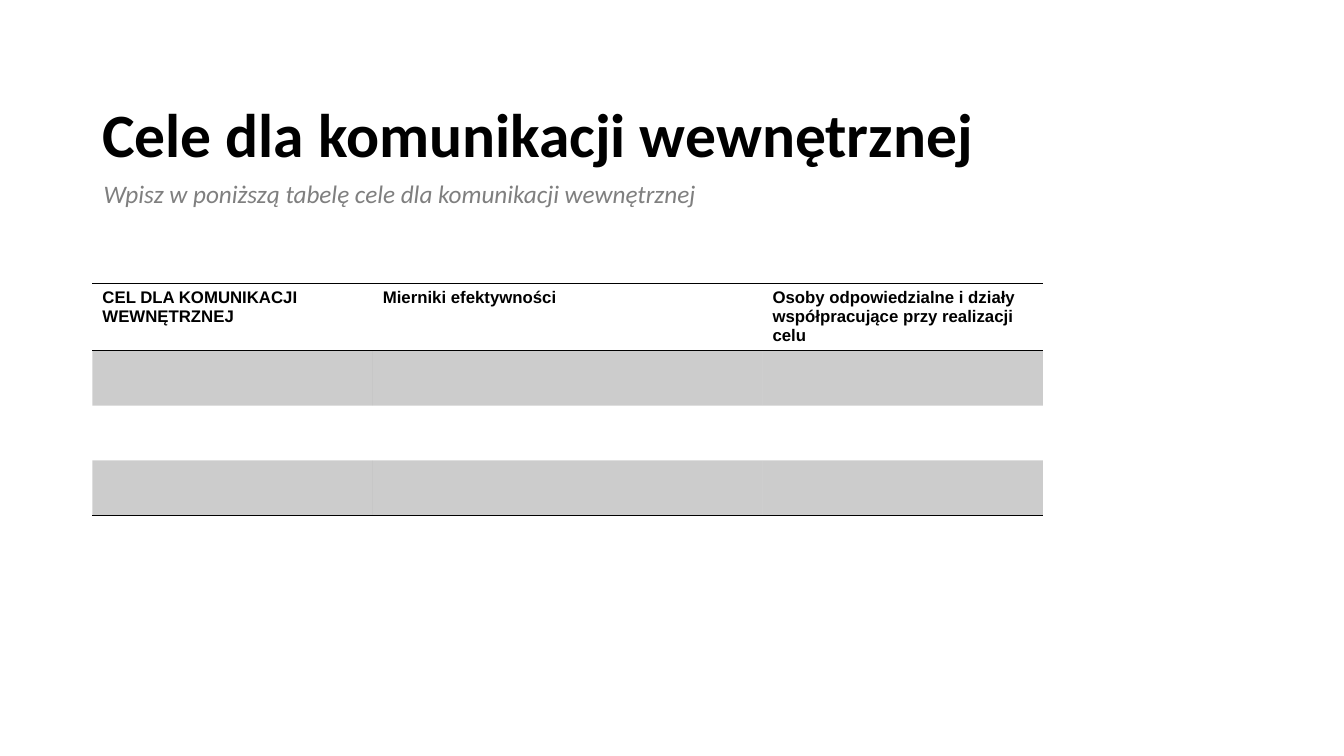
from dataclasses import dataclass

from lxml.etree import SubElement
from pptx import Presentation
from pptx.dml.color import RGBColor
from pptx.enum.text import MSO_ANCHOR
from pptx.oxml.ns import qn
from pptx.util import Pt


@dataclass(frozen=True)
class Theme:
    ink: str = "000000"
    muted: str = "7F7F7F"
    heading_font: str = "Calibri"
    table_font: str = "Arial"
    title_size: float = 44
    subtitle_size: float = 18
    header_size: float = 12
    rule_width: float = 1
    band_opacity: int = 20


@dataclass(frozen=True)
class Box:
    left: float
    top: float
    width: float
    height: float

    def lengths(self):
        return Pt(self.left), Pt(self.top), Pt(self.width), Pt(self.height)


THEME = Theme()
NO_STYLE = "{2D5ABB26-0587-4C30-8999-92F81FD0307C}"
HEADERS = (
    "CEL DLA KOMUNIKACJI WEWNĘTRZNEJ",
    "Mierniki efektywności",
    "Osoby odpowiedzialne i działy współpracujące przy realizacji celu",
)
COLUMN_SHARES = (0.295, 0.41, 0.295)
HEADER_HEIGHT = 48
BODY_ROWS = 3


def add_span(para, text, font, size, color, bold=False, italic=False):
    span = para.add_run()
    span.text = text
    span.font.name = font
    span.font.size = Pt(size)
    span.font.bold = bold
    span.font.italic = italic
    span.font.color.rgb = RGBColor.from_string(color)


def add_text_box(page, box, anchor):
    frame = page.shapes.add_textbox(*box.lengths()).text_frame
    frame.word_wrap = True
    frame.vertical_anchor = anchor
    return frame.paragraphs[0]


def add_title(page, box):
    para = add_text_box(page, box, MSO_ANCHOR.MIDDLE)
    para.line_spacing = 0.9
    add_span(para, "Cele dla komunikacji wewnętrznej",
             THEME.heading_font, THEME.title_size, THEME.ink, bold=True)


def add_subtitle(page, box):
    para = add_text_box(page, box, MSO_ANCHOR.TOP)
    add_span(para, "Wpisz w poniższą tabelę cele dla komunikacji wewnętrznej",
             THEME.heading_font, THEME.subtitle_size, THEME.muted, italic=True)


def add_rule(cell, side):
    properties = cell._tc.get_or_add_tcPr()
    line = SubElement(properties, qn(f"a:ln{side}"), w=str(Pt(THEME.rule_width)))
    fill = SubElement(line, qn("a:solidFill"))
    SubElement(fill, qn("a:srgbClr"), val=THEME.ink)


def fill_band(cell):
    cell.fill.solid()
    cell.fill.fore_color.rgb = RGBColor.from_string(THEME.ink)
    color = cell._tc.tcPr.find(qn("a:solidFill")).find(qn("a:srgbClr"))
    SubElement(color, qn("a:alpha"), val=str(THEME.band_opacity * 1000))


def add_goals_table(page, box):
    frame = page.shapes.add_table(BODY_ROWS + 1, len(HEADERS), *box.lengths())
    table = frame.table
    table._tbl.tblPr.find(qn("a:tableStyleId")).text = NO_STYLE
    for column, share in zip(table.columns, COLUMN_SHARES):
        column.width = Pt(box.width * share)
    body_height = (box.height - HEADER_HEIGHT) / BODY_ROWS
    for index, row in enumerate(table.rows):
        row.height = Pt(body_height if index else HEADER_HEIGHT)
        for cell, header in zip(row.cells, HEADERS):
            if index == 0:
                add_span(cell.text_frame.paragraphs[0], header,
                         THEME.table_font, THEME.header_size, THEME.ink, bold=True)
                add_rule(cell, "T")
            if index in (0, BODY_ROWS):
                add_rule(cell, "B")
            if index % 2:
                fill_band(cell)
            else:
                cell.fill.background()


def main():
    deck = Presentation()
    deck.slide_width, deck.slide_height = Pt(960), Pt(540)
    page = deck.slides.add_slide(deck.slide_layouts[6])
    add_goals_table(page, Box(66, 202.5, 679, 165.6))
    add_title(page, Box(66, 46, 828, 104.4))
    add_subtitle(page, Box(67, 124, 566, 29))
    deck.save("out.pptx")


if __name__ == "__main__":
    main()
